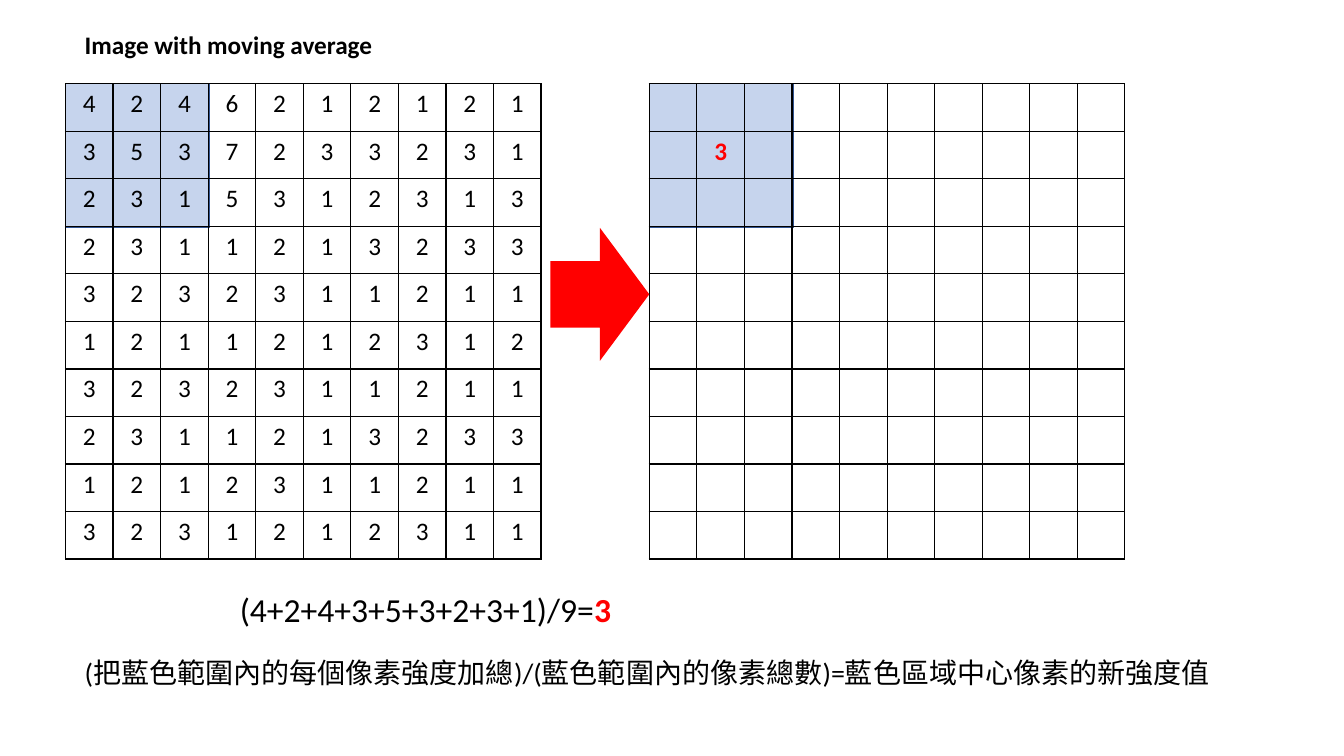
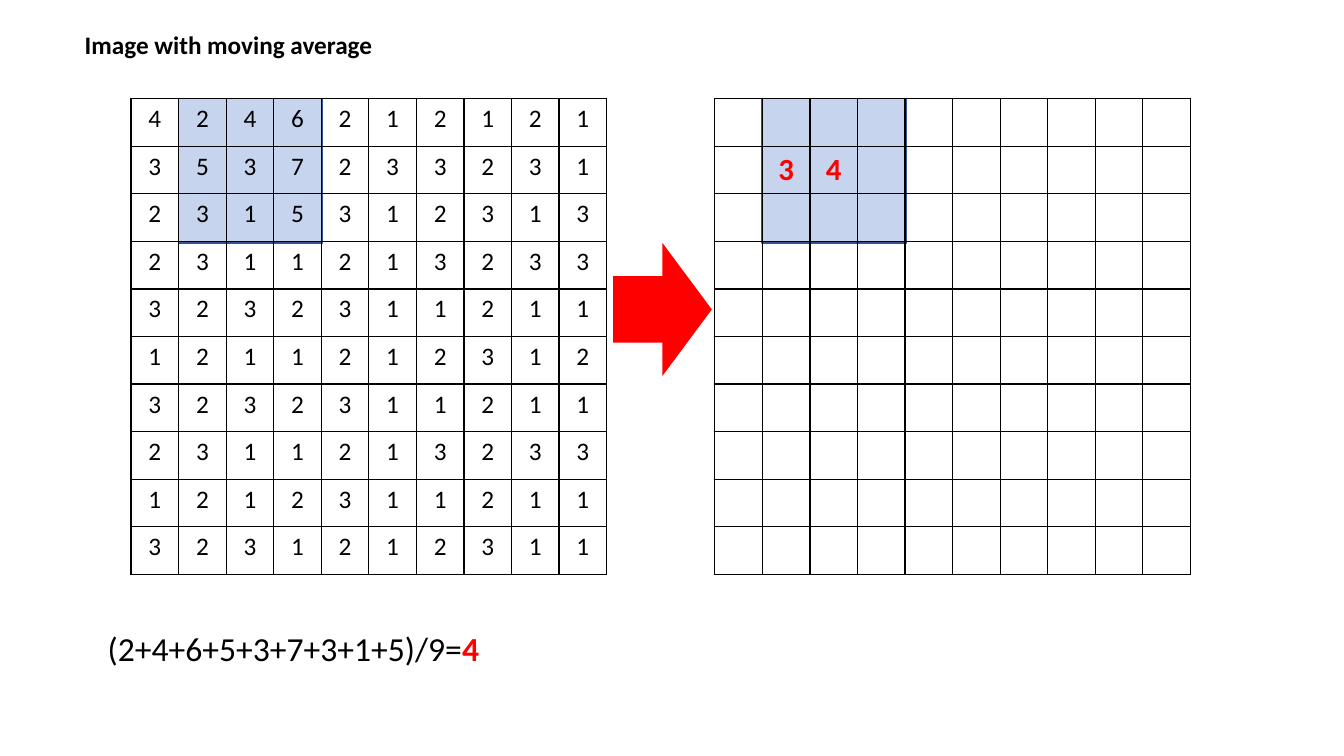
from dataclasses import dataclass

from lxml.etree import SubElement
from pptx import Presentation
from pptx.dml.color import RGBColor
from pptx.enum.shapes import MSO_SHAPE
from pptx.enum.text import MSO_ANCHOR, MSO_AUTO_SIZE, PP_ALIGN
from pptx.oxml.ns import qn
from pptx.util import Emu, Pt

# Shared style: 100 px to the inch
EMU_PER_PX = 9144
FONT = "Calibri"
BLACK, RED, BLUE, NAVY = "000000", "FF0000", "4472C4", "325491"
TITLE = "Image with moving average"
TITLE_LAYOUT = 5

# Pixel grid and averaging window
GRID = 10
GRID_SIZE = 472
WINDOW = 3
WINDOW_SIZE = 143
PIXELS = [[int(digit) for digit in row] for row in (
    "4246212121", "3537233231", "2315312313", "2311213233", "3232311211",
    "1211212312", "3232311211", "2311213233", "1212311211", "3231212311",
)]


@dataclass(frozen=True)
class Box:
    left: int
    top: int
    width: int
    height: int


@dataclass(frozen=True)
class Step:
    window_col: int
    source_left: int
    result_left: int
    grid_top: int
    arrow_left: int
    formula: Box
    result_size: int
    explanation: str = ""


STEPS = [
    Step(0, 65, 644, 83, 546, Box(228, 579, 392, 50), 18,
         "(把藍色範圍內的每個像素強度加總)/(藍色範圍內的像素總數)=藍色區域中心像素的新強度值"),
    Step(1, 130, 709, 98, 608, Box(97, 618, 392, 50), 22),
]
TITLE_BOX = Box(74, 24, 308, 40)
EXPLANATION_BOX = Box(74, 645, 1145, 44)


def px(length: int) -> Emu:
    return Emu(length * EMU_PER_PX)


def rgb(code: str) -> RGBColor:
    return RGBColor.from_string(code)


def bounds(box: Box) -> tuple:
    return px(box.left), px(box.top), px(box.width), px(box.height)


def style_font(font, size: int, colour: str = BLACK, bold: bool = False) -> None:
    font.name, font.size, font.bold = FONT, Pt(size), bold
    font.color.rgb = rgb(colour)


def add_title(slide) -> None:
    title = slide.shapes.title
    title.left, title.top, title.width, title.height = bounds(TITLE_BOX)
    frame = title.text_frame
    frame.text = TITLE
    frame.word_wrap = False
    frame.auto_size = MSO_AUTO_SIZE.NONE
    frame.vertical_anchor = MSO_ANCHOR.TOP
    frame.paragraphs[0].alignment = PP_ALIGN.LEFT
    style_font(frame.paragraphs[0].font, 18, bold=True)


def add_text(slide, box: Box, text: str, size: int, wrap: bool):
    frame = slide.shapes.add_textbox(*bounds(box)).text_frame
    frame.word_wrap = wrap
    paragraph = frame.paragraphs[0]
    paragraph.add_run().text = text
    style_font(paragraph.font, size)
    return paragraph


def add_preset(slide, preset: MSO_SHAPE, box: Box, fill: str):
    shape = slide.shapes.add_shape(preset, *bounds(box))
    shape.shadow.inherit = False
    shape.fill.solid()
    shape.fill.fore_color.rgb = rgb(fill)
    shape.line.fill.background()
    return shape


def add_window(slide, grid_left: int, top: int, col: int) -> None:
    left = grid_left + col * GRID_SIZE // GRID
    window = add_preset(slide, MSO_SHAPE.RECTANGLE,
                        Box(left, top, WINDOW_SIZE, WINDOW_SIZE), BLUE)
    window.line.color.rgb = rgb(NAVY)
    window.line.width = Pt(1)
    fill_colour = window.element.spPr.find(qn("a:solidFill")).find(qn("a:srgbClr"))
    SubElement(fill_colour, qn("a:alpha"), val="30000")


def outline_cell(cell) -> None:
    properties = cell._tc.get_or_add_tcPr()
    for side in ("lnL", "lnR", "lnT", "lnB"):
        line = SubElement(properties, qn(f"a:{side}"), w=str(Pt(1)))
        fill = SubElement(line, qn("a:solidFill"))
        SubElement(fill, qn("a:srgbClr"), val=BLACK)
    cell.fill.background()


def add_grid(slide, left: int, top: int, values: dict[tuple[int, int], int],
             size: int, colour: str = BLACK, bold: bool = False) -> None:
    table = slide.shapes.add_table(
        GRID, GRID, *bounds(Box(left, top, GRID_SIZE, GRID_SIZE))).table
    table.first_row = table.horz_banding = False
    for column in table.columns:
        column.width = px(GRID_SIZE) // GRID
    for r, row in enumerate(table.rows):
        row.height = px(GRID_SIZE) // GRID
        for c, cell in enumerate(row.cells):
            outline_cell(cell)
            if (r, c) in values:
                cell.text = str(values[r, c])
                paragraph = cell.text_frame.paragraphs[0]
                paragraph.alignment = PP_ALIGN.CENTER
                style_font(paragraph.font, size, colour, bold)


def window_values(col: int) -> list[int]:
    return [value for row in PIXELS[:WINDOW] for value in row[col:col + WINDOW]]


def window_mean(col: int) -> int:
    return sum(window_values(col)) // WINDOW ** 2


def add_formula(slide, step: Step) -> None:
    terms = "+".join(map(str, window_values(step.window_col)))
    paragraph = add_text(slide, step.formula, f"({terms})/{WINDOW ** 2}=", 24, wrap=False)
    mean = paragraph.add_run()
    mean.text = str(window_mean(step.window_col))
    style_font(mean.font, 24, RED, bold=True)


def build_step(deck, step: Step) -> None:
    slide = deck.slides.add_slide(deck.slide_layouts[TITLE_LAYOUT])
    add_title(slide)

    # Source pixels
    pixels = {(r, c): value for r, row in enumerate(PIXELS) for c, value in enumerate(row)}
    add_window(slide, step.source_left, step.grid_top, step.window_col)
    add_grid(slide, step.source_left, step.grid_top, pixels, 18)

    # Averages so far, each at the centre of its window
    means = {(1, col + 1): window_mean(col) for col in range(step.window_col + 1)}
    add_window(slide, step.result_left, step.grid_top, step.window_col)
    add_grid(slide, step.result_left, step.grid_top, means, step.result_size, RED, bold=True)

    # Arrow and calculation
    add_preset(slide, MSO_SHAPE.RIGHT_ARROW,
               Box(step.arrow_left, step.grid_top + WINDOW_SIZE, 98, 132), RED)
    add_formula(slide, step)
    if step.explanation:
        add_text(slide, EXPLANATION_BOX, step.explanation, 20, wrap=True)


def main() -> None:
    deck = Presentation()
    deck.slide_width, deck.slide_height = px(1333), px(750)
    for step in STEPS:
        build_step(deck, step)
    deck.save("out.pptx")


if __name__ == "__main__":
    main()
